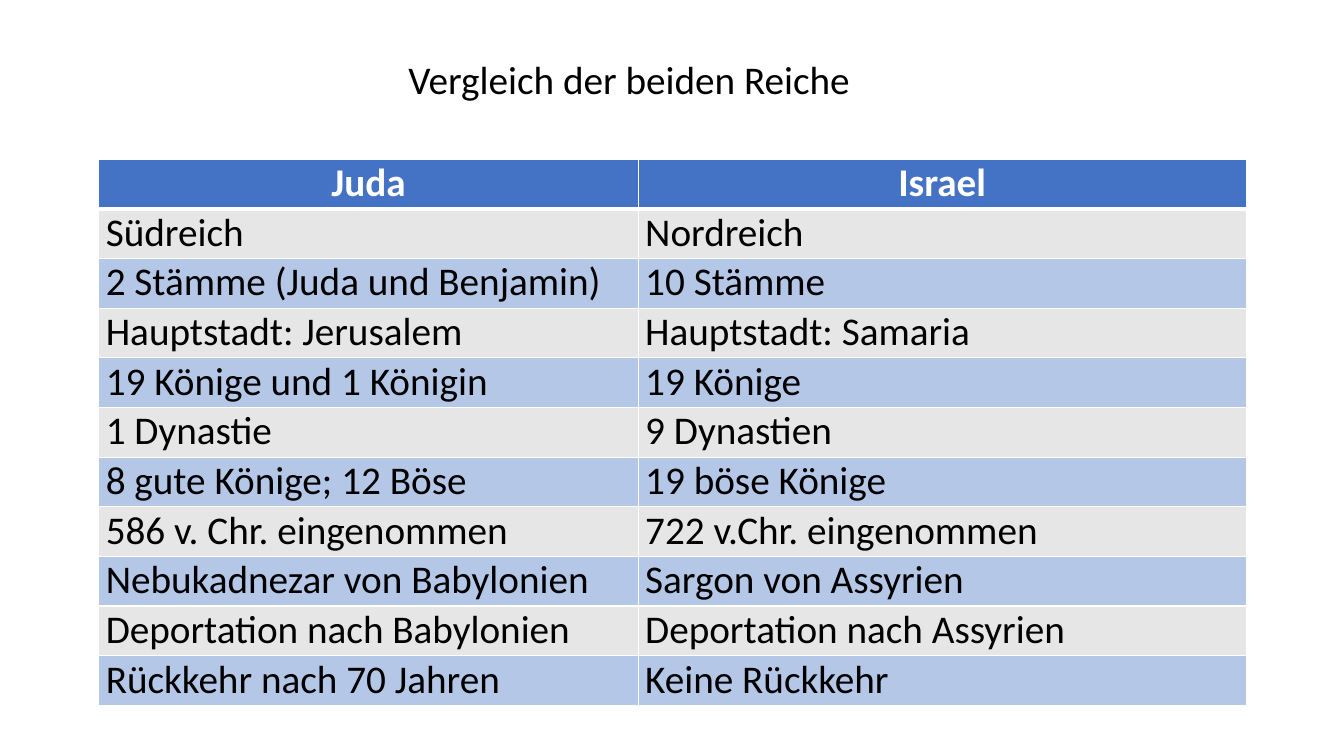
import dataclasses

import pptx
import pptx.dml.color
import pptx.enum.text
import pptx.oxml
import pptx.oxml.ns
import pptx.util

Inches = pptx.util.Inches
Pt = pptx.util.Pt
RGB = pptx.dml.color.RGBColor.from_string
ALIGN = pptx.enum.text.PP_ALIGN
ANCHOR = pptx.enum.text.MSO_ANCHOR
AUTO_SIZE = pptx.enum.text.MSO_AUTO_SIZE


@dataclasses.dataclass(frozen=True)
class Theme:
    font: str = "Calibri"
    size: int = 28
    text: str = "000000"
    header_text: str = "FFFFFF"
    header_fill: str = "4472C4"
    bands: tuple = ("E7E6E6", "B4C7E7")
    border: str = "FFFFFF"
    thin: int = 1
    thick: int = 3


theme = Theme()


def write(p, text, color, bold, align):
    p.alignment = align
    r = p.add_run()
    r.text = text
    for name, value in {"name": theme.font, "size": Pt(theme.size), "bold": bold}.items():
        setattr(r.font, name, value)
    r.font.color.rgb = RGB(color)


def add_border(tcPr, side, width):
    tcPr.append(pptx.oxml.parse_xml(
        f'<a:{side} {pptx.oxml.ns.nsdecls("a")} w="{Pt(width)}"><a:solidFill>'
        f'<a:srgbClr val="{theme.border}"/></a:solidFill></a:{side}>'))


prs = pptx.Presentation()
prs.slide_width = Inches(13.33)
prs.slide_height = Inches(7.5)
s = prs.slides.add_slide(prs.slide_layouts[5])

title = s.shapes.title
title_box = {"left": 3.95, "top": 0.5, "width": 4.72, "height": 0.57}
for name, value in title_box.items():
    setattr(title, name, Inches(value))
tf = title.text_frame
title_format = {"word_wrap": False, "auto_size": AUTO_SIZE.SHAPE_TO_FIT_TEXT,
                "vertical_anchor": ANCHOR.TOP}
for name, value in title_format.items():
    setattr(tf, name, value)
write(tf.paragraphs[0], "Vergleich der beiden Reiche", theme.text, False, ALIGN.LEFT)

rows = [
    ("Juda", "Israel"),
    ("Südreich", "Nordreich"),
    ("2 Stämme (Juda und Benjamin)", "10 Stämme"),
    ("Hauptstadt: Jerusalem", "Hauptstadt: Samaria"),
    ("19 Könige und 1 Königin", "19 Könige"),
    ("1 Dynastie", "9 Dynastien"),
    ("8 gute Könige; 12 Böse", "19 böse Könige"),
    ("586 v. Chr. eingenommen", "722 v.Chr. eingenommen"),
    ("Nebukadnezar von Babylonien", "Sargon von Assyrien"),
    ("Deportation nach Babylonien", "Deportation nach Assyrien"),
    ("Rückkehr nach 70 Jahren", "Keine Rückkehr"),
]
col_widths = (5.35, 6.03)
cell_margins = {"margin_left": Inches(0.07), "margin_right": Inches(0.07),
                "margin_top": 0, "margin_bottom": 0}

table = s.shapes.add_table(len(rows), len(col_widths), Inches(0.98), Inches(1.58),
                           Inches(sum(col_widths)), Inches(5.42)).table
for col, width in zip(table.columns, col_widths):
    col.width = Inches(width)

for i, row in enumerate(rows):
    header = i == 0
    fill = theme.header_fill if header else theme.bands[(i - 1) % 2]
    color = theme.header_text if header else theme.text
    align = ALIGN.CENTER if header else ALIGN.LEFT
    borders = {"lnL": theme.thin, "lnR": theme.thin,
               "lnT": theme.thick if i == 1 else theme.thin,
               "lnB": theme.thick if header else theme.thin}
    for j, text in enumerate(row):
        cell = table.cell(i, j)
        for name, value in cell_margins.items():
            setattr(cell, name, value)
        for side, width in borders.items():
            add_border(cell._tc.get_or_add_tcPr(), side, width)
        cell.fill.solid()
        cell.fill.fore_color.rgb = RGB(fill)
        write(cell.text_frame.paragraphs[0], text, color, header, align)

prs.save("out.pptx")
